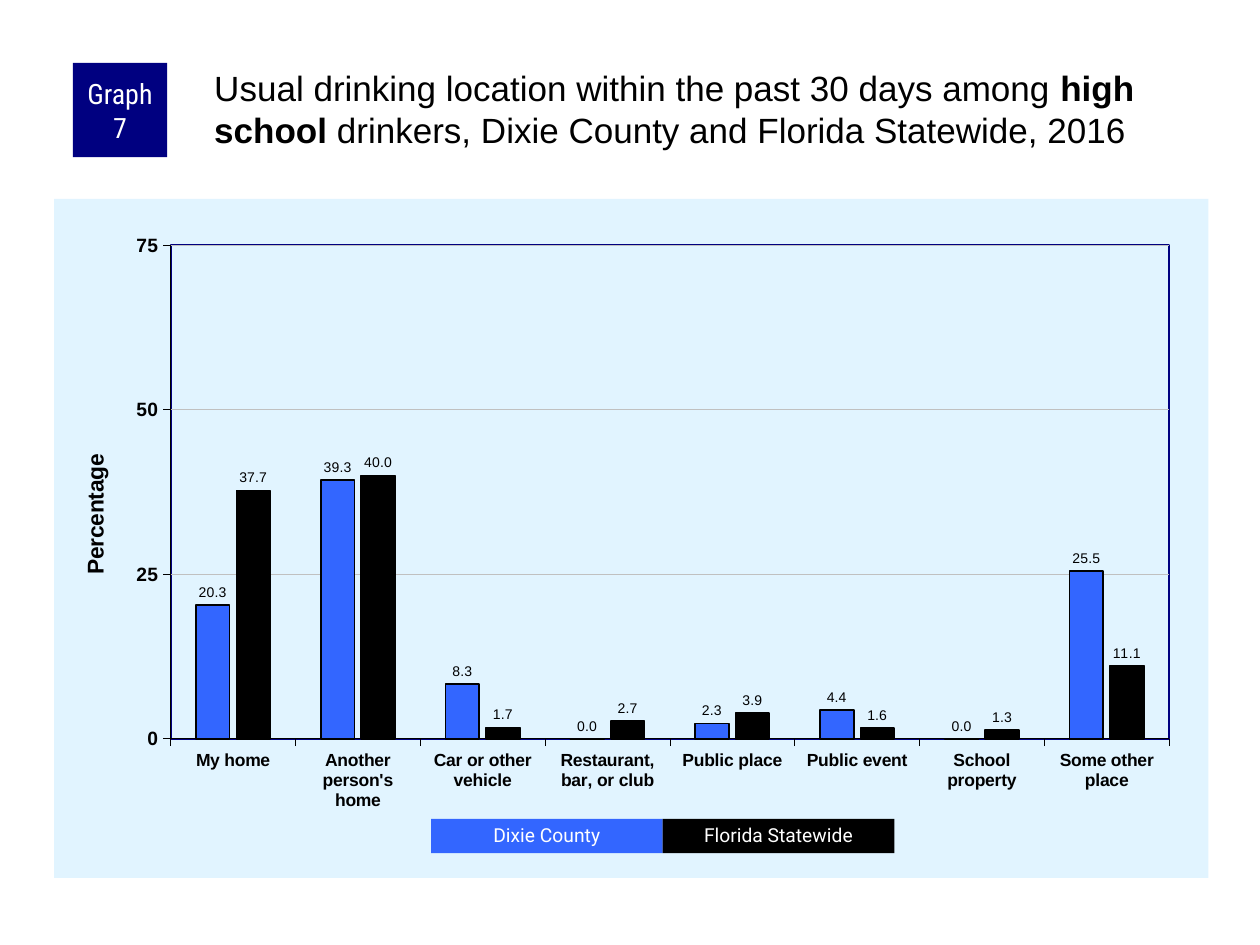
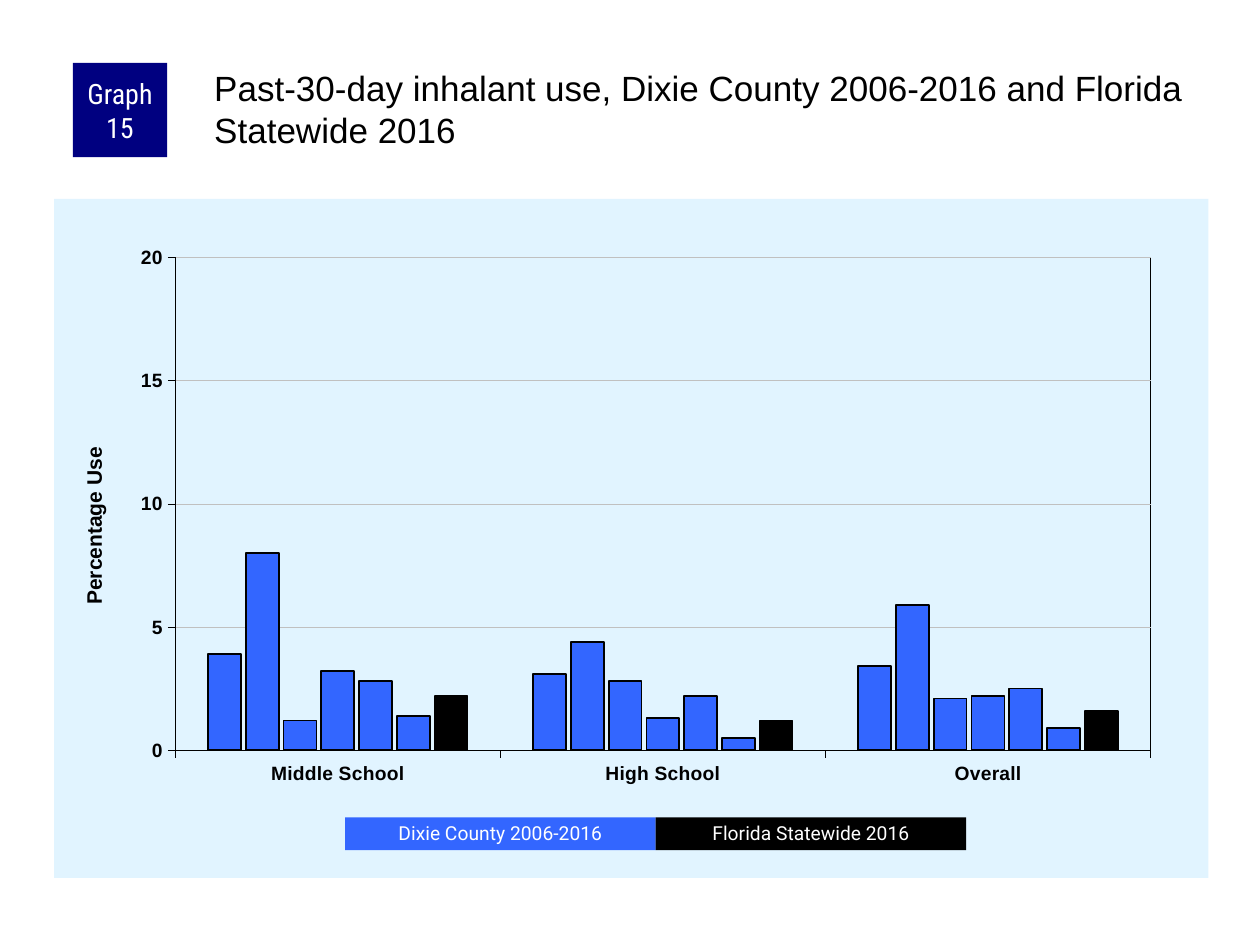
"""Build two survey graph slides with a shared badge, title, chart and colour key."""
from dataclasses import dataclass

import pptx
import pptx.chart.chart
import pptx.chart.data
import pptx.dml.color
import pptx.enum.chart
import pptx.enum.shapes
import pptx.enum.text
import pptx.oxml
import pptx.oxml.ns
import pptx.slide
import pptx.util

Cm, Pt = pptx.util.Cm, pptx.util.Pt
NAVY, BLUE, BLACK = "000080", "3366FF", "000000"
WHITE, PALE_BLUE, GREY = "FFFFFF", "E1F4FF", "C0C0C0"
BODY_FONT, BADGE_FONT, KEY_FONT = "Arial", "Roboto Condensed", "Roboto"


@dataclass(frozen=True)
class Box:
    """A place on the slide in centimetres."""
    left: float
    top: float
    width: float
    height: float

    def lengths(self) -> tuple:
        """Return the four values as lengths."""
        return Cm(self.left), Cm(self.top), Cm(self.width), Cm(self.height)


@dataclass(frozen=True)
class Graph:
    """The content and settings of one graph slide."""
    number: int
    title: tuple[tuple[str, bool], ...]
    categories: tuple[str, ...]
    values: tuple[tuple[float, ...], ...]
    axis_title: str
    axis_title_size: float
    axis_title_place: tuple[float, float]
    maximum: float
    major_unit: float
    category_size: float
    gap_width: int
    overlap: int
    plot_place: tuple[float, float, float, float]
    plot_border: tuple[str, float]
    show_values: bool
    key_labels: tuple[str, str]
    key_start: Box


BADGE_BOX = Box(1.47, 1.27, 1.9, 1.9)
TITLE_BOX = Box(4.24, 1.27, 20.12, 2.11)
CHART_BOX = Box(1.09, 4.01, 23.27, 13.69)

GRAPHS = (
    Graph(
        number=7,
        title=(
            ("Usual drinking location within the past 30 days among ", False),
            ("high school", True),
            (" drinkers, Dixie County and Florida Statewide, 2016", False),
        ),
        categories=(
            "My home", "Another person's home", "Car or other vehicle",
            "Restaurant, bar, or club", "Public place", "Public event",
            "School property", "Some other place",
        ),
        values=(
            (20.3, 39.3, 8.3, 0, 2.3, 4.4, 0, 25.5),
            (37.7, 40, 1.7, 2.7, 3.9, 1.6, 1.3, 11.1),
        ),
        axis_title="Percentage", axis_title_size=13, axis_title_place=(0.02, 0.37),
        maximum=75, major_unit=25, category_size=10, gap_width=150, overlap=-20,
        plot_place=(0.101, 0.068, 0.865, 0.727), plot_border=(NAVY, 1),
        show_values=True,
        key_labels=("Dixie County", "Florida Statewide"),
        key_start=Box(8.69, 16.51, 4.67, 0.69),
    ),
    Graph(
        number=15,
        title=(("Past-30-day inhalant use, Dixie County 2006-2016 and Florida "
                "Statewide 2016", False),),
        categories=("Middle School", "High School", "Overall"),
        values=(
            (3.9, 3.1, 3.4), (8, 4.4, 5.9), (1.2, 2.8, 2.1), (3.2, 1.3, 2.2),
            (2.8, 2.2, 2.5), (1.4, 0.5, 0.9), (2.2, 1.2, 1.6),
        ),
        axis_title="Percentage Use", axis_title_size=12, axis_title_place=(0.02, 0.36),
        maximum=20, major_unit=5, category_size=11, gap_width=200, overlap=-15,
        plot_place=(0.105, 0.086, 0.845, 0.726), plot_border=(BLACK, 0.25),
        show_values=False,
        key_labels=("Dixie County 2006-2016", "Florida Statewide 2016"),
        key_start=Box(6.96, 16.48, 6.26, 0.66),
    ),
)


def rgb(color: str) -> pptx.dml.color.RGBColor:
    """Turn a hex string into a colour."""
    return pptx.dml.color.RGBColor.from_string(color)


def style_font(font, name: str, size: float, color: str = BLACK, bold: bool | None = False) -> None:
    """Set typeface, size, colour and weight."""
    font.name, font.size, font.bold = name, Pt(size), bold
    font.color.rgb = rgb(color)


def style_line(line, color: str, width: float) -> None:
    """Set the colour and width of a line."""
    line.color.rgb = rgb(color)
    line.width = Pt(width)


def add_label(slide: pptx.slide.Slide, box: Box, text: str, fill: str,
              font: str, size: float, side_inset: float, spacing: float) -> None:
    """Draw a filled rectangle with centred white text."""
    label = slide.shapes.add_shape(pptx.enum.shapes.MSO_SHAPE.RECTANGLE, *box.lengths())
    label.shadow.inherit = False
    label.fill.solid()
    label.fill.fore_color.rgb = rgb(fill)
    label.line.fill.background()
    frame = label.text_frame
    frame.word_wrap = True
    frame.vertical_anchor = pptx.enum.text.MSO_ANCHOR.MIDDLE
    frame.margin_left = frame.margin_right = Cm(side_inset)
    frame.margin_top = frame.margin_bottom = 0
    paragraph = frame.paragraphs[0]
    paragraph.text = text
    paragraph.alignment = pptx.enum.text.PP_ALIGN.CENTER
    paragraph.line_spacing = spacing
    style_font(paragraph.font, font, size, WHITE)


def add_title(slide: pptx.slide.Slide, pieces: tuple[tuple[str, bool], ...]) -> None:
    """Write the slide title, with its stressed words in bold."""
    frame = slide.shapes.add_textbox(*TITLE_BOX.lengths()).text_frame
    frame.word_wrap = True
    frame.margin_left = frame.margin_top = Cm(0.08)
    frame.margin_right = frame.margin_bottom = 0
    paragraph = frame.paragraphs[0]
    style_font(paragraph.font, BODY_FONT, 20, bold=None)
    for text, bold in pieces:
        run = paragraph.add_run()
        run.text = text
        run.font.bold = bold


def chart_xml(body: str):
    """Parse chart markup with its namespaces declared."""
    head, rest = body.split(">", 1)
    return pptx.oxml.parse_xml(f"{head} {pptx.oxml.ns.nsdecls('c', 'a')}>{rest}")


def set_layout(parent, index: int, place: tuple[float, ...], inner: bool = False) -> None:
    """Give a chart part a fixed place, as fractions of the chart."""
    for old in parent.findall(pptx.oxml.ns.qn("c:layout")):
        parent.remove(old)
    target = '<c:layoutTarget val="inner"/>' if inner else ""
    modes = '<c:xMode val="edge"/><c:yMode val="edge"/>'
    sides = "".join(f'<c:{side} val="{part}"/>' for side, part in zip("xywh", place))
    parent.insert(index, chart_xml(
        f"<c:layout><c:manualLayout>{target}{modes}{sides}</c:manualLayout></c:layout>"))


def style_areas(chart: pptx.chart.chart.Chart, graph: Graph) -> None:
    """Fill the chart background, then place and outline the plot."""
    chart_part = chart._chartSpace.find(pptx.oxml.ns.qn("c:chart"))
    chart_part.addnext(chart_xml(
        f'<c:spPr><a:solidFill><a:srgbClr val="{PALE_BLUE}"/></a:solidFill>'
        "<a:ln><a:noFill/></a:ln></c:spPr>"))
    plot_area = chart_part.find(pptx.oxml.ns.qn("c:plotArea"))
    set_layout(plot_area, 0, graph.plot_place, inner=True)
    color, width = graph.plot_border
    plot_area.append(chart_xml(
        f'<c:spPr><a:noFill/><a:ln w="{int(Pt(width))}"><a:solidFill>'
        f'<a:srgbClr val="{color}"/></a:solidFill></a:ln></c:spPr>'))


def style_axes(chart: pptx.chart.chart.Chart, graph: Graph) -> None:
    """Set the scale, ticks, gridlines and axis title."""
    scale = chart.value_axis
    for axis, size in ((chart.category_axis, graph.category_size), (scale, 11)):
        axis.major_tick_mark = pptx.enum.chart.XL_TICK_MARK.OUTSIDE
        axis.minor_tick_mark = pptx.enum.chart.XL_TICK_MARK.NONE
        style_font(axis.tick_labels.font, BODY_FONT, size, bold=True)
        style_line(axis.format.line, BLACK, 0.25)
    scale.minimum_scale, scale.maximum_scale = 0, graph.maximum
    scale.major_unit = graph.major_unit
    scale.tick_labels.number_format = "0"
    scale.tick_labels.number_format_is_linked = False
    style_line(scale.major_gridlines.format.line, GREY, 0.25)
    paragraph = scale.axis_title.text_frame.paragraphs[0]
    paragraph.text = graph.axis_title
    style_font(paragraph.font, BODY_FONT, graph.axis_title_size, bold=True)
    set_layout(scale.axis_title._element, 1, graph.axis_title_place)


def style_columns(chart: pptx.chart.chart.Chart, graph: Graph) -> None:
    """Colour county columns blue and the statewide column black."""
    plot = chart.plots[0]
    plot.gap_width, plot.overlap = graph.gap_width, graph.overlap
    plot.vary_by_categories = False
    statewide = len(graph.values) - 1
    for index, columns in enumerate(plot.series):
        columns.format.fill.solid()
        columns.format.fill.fore_color.rgb = rgb(BLACK if index == statewide else BLUE)
        style_line(columns.format.line, BLACK, 1)
    if graph.show_values:
        plot.has_data_labels = True
        labels = plot.data_labels
        labels.show_value = True
        labels.number_format, labels.number_format_is_linked = "0.0", False
        labels.position = pptx.enum.chart.XL_LABEL_POSITION.OUTSIDE_END
        style_font(labels.font, BODY_FONT, 8)


def add_graph_chart(slide: pptx.slide.Slide, graph: Graph) -> None:
    """Draw the clustered columns."""
    survey = pptx.chart.data.CategoryChartData()
    survey.categories = graph.categories
    for number, values in enumerate(graph.values, 1):
        survey.add_series(f"Series {number}", values)
    chart = slide.shapes.add_chart(
        pptx.enum.chart.XL_CHART_TYPE.COLUMN_CLUSTERED, *CHART_BOX.lengths(), survey).chart
    chart.has_title = chart.has_legend = False
    style_font(chart.font, BODY_FONT, 8)
    style_axes(chart, graph)
    style_columns(chart, graph)
    style_areas(chart, graph)


def add_key(slide: pptx.slide.Slide, graph: Graph) -> None:
    """Draw the two colour key labels side by side."""
    start = graph.key_start
    for index, (text, fill) in enumerate(zip(graph.key_labels, (BLUE, BLACK))):
        box = Box(start.left + index * start.width, start.top, start.width, start.height)
        add_label(slide, box, text, fill, KEY_FONT, 11, 0.25, 0.9)


def main() -> None:
    """Build and save the presentation."""
    deck = pptx.Presentation()
    deck.slide_width, deck.slide_height = Cm(25.4), Cm(19.05)
    for graph in GRAPHS:
        slide = deck.slides.add_slide(deck.slide_layouts[6])
        add_graph_chart(slide, graph)
        add_label(slide, BADGE_BOX, f"Graph {graph.number}", NAVY, BADGE_FONT, 16, 0.13, 1.0)
        add_title(slide, graph.title)
        add_key(slide, graph)
    deck.save("out.pptx")


if __name__ == "__main__":
    main()
